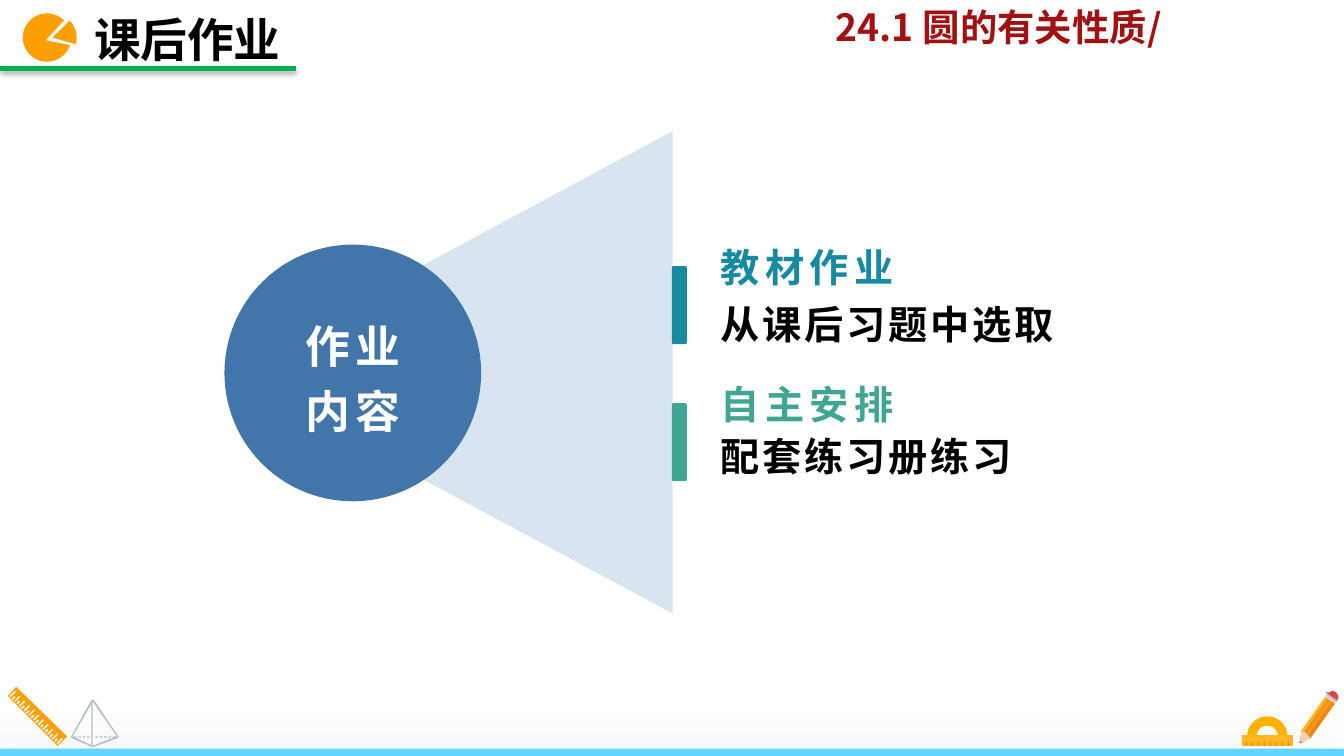
"""Build the homework slide with its header, topic fan and stationery decorations."""
import dataclasses
import math
import typing

import lxml.etree
import pptx
import pptx.dml.color
import pptx.enum.shapes
import pptx.enum.text
import pptx.oxml.ns
import pptx.util

Inches = pptx.util.Inches
RGBColor = pptx.dml.color.RGBColor
Shape = pptx.enum.shapes.MSO_SHAPE
Anchor = pptx.enum.text.MSO_ANCHOR
Align = pptx.enum.text.PP_ALIGN
Point = tuple[float, float]
Box = tuple[float, float, float, float]

FONT = "Noto Sans CJK SC"
BLACK = RGBColor(0x00, 0x00, 0x00)
WHITE = RGBColor(0xFF, 0xFF, 0xFF)
SKY = RGBColor(0x63, 0xD6, 0xFF)
GREEN = RGBColor(0x00, 0xB0, 0x50)
DARK_RED = RGBColor(0xA1, 0x11, 0x11)
PALE_BLUE = RGBColor(0xD8, 0xE4, 0xF0)
BLUE = RGBColor(0x42, 0x76, 0xAA)
TEAL = RGBColor(0x17, 0x8A, 0xA1)
MINT = RGBColor(0x40, 0xA6, 0x93)
ORANGE = RGBColor(0xFE, 0x9F, 0x00)
ARCH_YELLOW = RGBColor(0xFF, 0xB1, 0x03)
YELLOW = RGBColor(0xFF, 0xB7, 0x20)
TICK_ORANGE = RGBColor(0xFB, 0x85, 0x01)
GREY = RGBColor(0xB0, 0xBE, 0xC5)
LEAD_RED = RGBColor(0xE7, 0x4C, 0x3C)
ERASER_RED = RGBColor(0xE2, 0x43, 0x48)
WOOD = RGBColor(0xF4, 0xCF, 0xB2)
PENCIL_TILT = 35.2


@dataclasses.dataclass
class Label:
    """Lines of text that share one style."""
    lines: list[str]
    size: float
    color: RGBColor
    spacing: float = 0
    line_spacing: float = 1.0
    align: Align = Align.LEFT
    anchor: Anchor = Anchor.MIDDLE
    margins: Box = (0.1, 0.05, 0.1, 0.05)


@dataclasses.dataclass
class Topic:
    """A homework topic with its marker bar."""
    heading: str
    detail: str
    color: RGBColor
    bar_top: float
    heading_top: float
    detail_top: float


TOPICS = [
    Topic("教材作业", "从课后习题中选取", TEAL, 1.98, 1.82, 2.19),
    Topic("自主安排", "配套练习册练习", MINT, 3, 2.84, 3.17),
]
PENCIL_PARTS = [
    ((9.76, 5.18, 0.09, 0.32), YELLOW),
    ((9.81, 5.2, 0.03, 0.32), RGBColor(0xED, 0x85, 0x18)),
    ((9.78, 5.18, 0.03, 0.32), RGBColor(0xF8, 0x90, 0x19)),
    ((9.86, 5.18, 0.09, 0.03), RGBColor(0xD1, 0xD3, 0xD4)),
    ((9.87, 5.18, 0.09, 0.02), RGBColor(0xBC, 0xBE, 0xC0)),
    ((9.86, 5.17, 0.09, 0.01), RGBColor(0x93, 0x95, 0x98)),
]


def set_values(target: typing.Any, values: dict[str, typing.Any]) -> None:
    for name, value in values.items():
        setattr(target, name, value)


def write(shape: typing.Any, label: Label) -> None:
    frame = shape.text_frame
    left, top, right, bottom = map(Inches, label.margins)
    set_values(frame, {
        "word_wrap": True, "auto_size": pptx.enum.text.MSO_AUTO_SIZE.NONE,
        "vertical_anchor": label.anchor, "margin_left": left,
        "margin_top": top, "margin_right": right, "margin_bottom": bottom})
    for index, line in enumerate(label.lines):
        paragraph = frame.add_paragraph() if index else frame.paragraphs[0]
        set_values(paragraph, {"alignment": label.align, "line_spacing": label.line_spacing})
        run = paragraph.add_run()
        run.text = line
        set_values(run.font, {"name": FONT, "size": pptx.util.Pt(label.size), "bold": True})
        run.font.color.rgb = label.color
        properties = run._r.get_or_add_rPr()
        properties.set("spc", str(round(label.spacing * 100)))
        east_asian = lxml.etree.SubElement(properties, pptx.oxml.ns.qn("a:ea"))
        east_asian.set("typeface", FONT)


def add_label(slide: typing.Any, box: Box, label: Label) -> None:
    write(slide.shapes.add_textbox(*map(Inches, box)), label)


def paint(shape: typing.Any, color: RGBColor) -> None:
    shape.shadow.inherit = False
    shape.fill.solid()
    shape.fill.fore_color.rgb = color
    shape.line.fill.background()


def add_block(slide: typing.Any, box: Box, color: RGBColor,
              kind: Shape = Shape.RECTANGLE, rotation: float = 0) -> typing.Any:
    shape = slide.shapes.add_shape(kind, *map(Inches, box))
    paint(shape, color)
    shape.rotation = rotation
    return shape


def add_outline(slide: typing.Any, contours: list[list[Point]], color: RGBColor) -> None:
    scaled = [[(Inches(x), Inches(y)) for x, y in contour] for contour in contours]
    builder = slide.shapes.build_freeform(*scaled[0][0], scale=1.0)
    for index, contour in enumerate(scaled):
        if index:
            builder.move_to(*contour[0])
        builder.add_line_segments(contour[1:], close=True)
    paint(builder.convert_to_shape(), color)


def arc(center: Point, radius: float, start: float, end: float) -> list[Point]:
    steps = 40
    angles = [math.radians(start + (end - start) * i / steps) for i in range(steps + 1)]
    return [(center[0] + radius * math.cos(a), center[1] + radius * math.sin(a)) for a in angles]


def add_shadow(shape: typing.Any, opacity: int, blur: float, distance: float, angle: int) -> None:
    qn = pptx.oxml.ns.qn
    properties = shape._element.spPr
    effects = properties.find(qn("a:effectLst"))
    if effects is None:
        effects = lxml.etree.SubElement(properties, qn("a:effectLst"))
    shadow = lxml.etree.SubElement(effects, qn("a:outerShdw"), {
        "blurRad": str(pptx.util.Pt(blur)), "dist": str(pptx.util.Pt(distance)),
        "dir": str(angle * 60000), "algn": "t", "rotWithShape": "0"})
    color = lxml.etree.SubElement(shadow, qn("a:srgbClr"), {"val": "000000"})
    lxml.etree.SubElement(color, qn("a:alpha"), {"val": str(opacity * 1000)})


def draw_protractor(slide: typing.Any) -> None:
    center = (9.43, 5.48)
    add_outline(slide, [arc(center, 0.15, 180, 360) + arc(center, 0.08, 360, 180)], ARCH_YELLOW)
    add_block(slide, (9.24, 5.47, 0.38, 0.08), YELLOW)
    for index in range(8):
        add_block(slide, (9.27 + 0.31 * index / 7, 5.52, 0.01, 0.03), TICK_ORANGE)


def draw_pencil(slide: typing.Any) -> None:
    for box, color in PENCIL_PARTS:
        add_block(slide, box, color, rotation=PENCIL_TILT)
    add_outline(slide, [[(9.88, 5.16), (9.91, 5.14), (9.94, 5.15), (9.96, 5.18), (9.95, 5.21)]],
                ERASER_RED)
    add_outline(slide, [[(9.67, 5.51), (9.68, 5.45), (9.7, 5.44), (9.72, 5.46), (9.74, 5.48),
                         (9.75, 5.49), (9.69, 5.53), (9.68, 5.52)]], WOOD)
    add_outline(slide, [[(9.67, 5.51), (9.68, 5.52), (9.69, 5.53), (9.67, 5.53)]], LEAD_RED)


def draw_ruler(slide: typing.Any) -> None:
    contours = [[(0.12, 5.11), (0.06, 5.18), (0.43, 5.55), (0.5, 5.48)]]
    pitch, width = 0.35 / 20, 0.01
    for index in range(21):
        x, y = 0.07 + pitch * index, 5.18 + pitch * index
        length = 0.02 if index % 2 else 0.04
        contours.append([(x, y), (x + length, y - length),
                         (x + length + width, y - length + width), (x + width, y + width)])
    add_outline(slide, contours, ORANGE)


def draw_pyramid(slide: typing.Any) -> None:
    for index in range(10):
        if index != 4:
            add_block(slide, (0.55 + 0.29 * index / 9, 5.48, 0.02, 0.01), GREY)
    add_outline(slide, [
        [(0.7, 5.21), (0.68, 5.21), (0.53, 5.48), (0.53, 5.49), (0.69, 5.56), (0.88, 5.49),
         (0.88, 5.48)],
        [(0.87, 5.48), (0.69, 5.55), (0.54, 5.48), (0.69, 5.22)]], GREY)
    add_block(slide, (0.68, 5.21, 0.01, 0.35), GREY)


def draw_header(slide: typing.Any) -> None:
    add_label(slide, (6.12, -0.02, 2.75, 0.44),
              Label(["24.1 圆的有关性质/"], 20, DARK_RED, anchor=Anchor.TOP,
                    margins=(0.1, 0.05, 0.15, 0.05)))
    underline = slide.shapes.add_connector(
        pptx.enum.shapes.MSO_CONNECTOR.STRAIGHT, *map(Inches, (0, 0.51, 2.2, 0.51)))
    underline.line.color.rgb = GREEN
    underline.line.width = pptx.util.Pt(2.25)
    add_shadow(underline, 38, 3.1, 1.6, 90)
    title = slide.shapes.title
    set_values(title, dict(zip(("left", "top", "width", "height"),
                               map(Inches, (0.6, 0.03, 1.6, 0.52)))))
    write(title, Label(["课后作业"], 25, BLACK))
    add_outline(slide, [arc((0.35, 0.28), 0.18, 18, 315) + [(0.34, 0.3)]], ORANGE)
    add_outline(slide, [arc((0.39, 0.28), 0.18, -45, 16) + [(0.39, 0.28)]], ORANGE)


def draw_topics(slide: typing.Any) -> None:
    add_block(slide, (1.54, 1.1, 3.59, 3.34), PALE_BLUE, Shape.ISOSCELES_TRIANGLE, 270)
    circle = add_block(slide, (1.67, 1.82, 1.91, 1.91), BLUE, Shape.OVAL)
    write(circle, Label(["作业", "内容"], 24, WHITE, 3, 1.2, Align.CENTER, margins=(0.07,) * 4))
    for topic in TOPICS:
        bar = add_block(slide, (5, topic.bar_top, 0.11, 0.58), topic.color, Shape.ROUNDED_RECTANGLE)
        bar.adjustments[0] = 0.1
        add_label(slide, (5.29, topic.heading_top, 1.69, 0.34),
                  Label([topic.heading], 21, topic.color, 3, 1.2, anchor=Anchor.BOTTOM,
                        margins=(0.07, 0.07, 0.07, 0)))
        add_label(slide, (5.29, topic.detail_top, 3.95, 0.41),
                  Label([topic.detail], 21, BLACK, 1.5, 1.2, margins=(0.07, 0, 0.07, 0.04)))


def main() -> None:
    presentation = pptx.Presentation()
    width = Inches(10)
    set_values(presentation, {"slide_width": width, "slide_height": width * 9 // 16})
    slide = presentation.slides.add_slide(presentation.slide_layouts[5])
    add_shadow(add_block(slide, (0, 5.57, 10, 0.06), SKY), 50, 35, 20, 135)
    for draw in (draw_protractor, draw_pencil, draw_ruler, draw_pyramid, draw_header, draw_topics):
        draw(slide)
    presentation.save("out.pptx")


if __name__ == "__main__":
    main()
